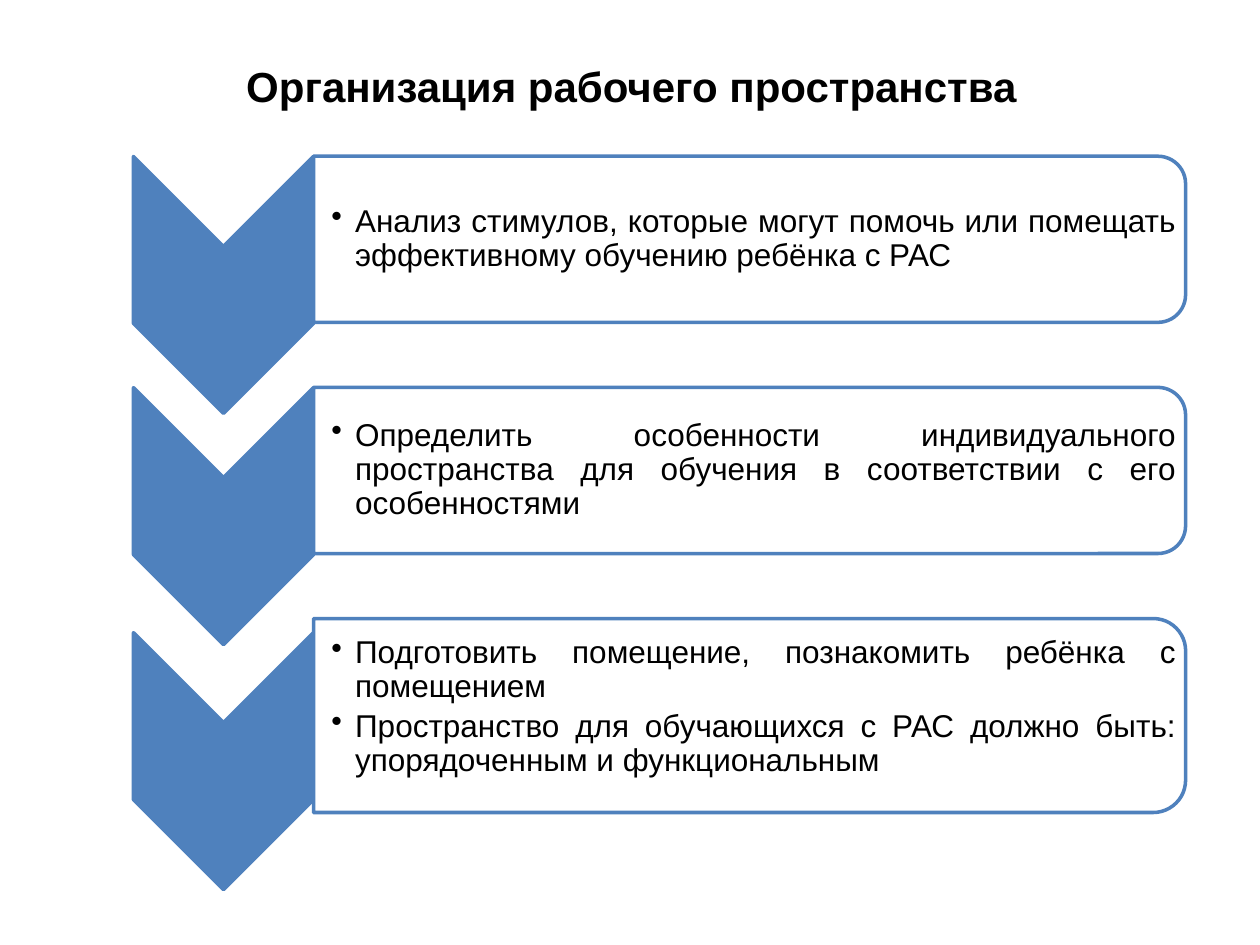
from dataclasses import dataclass

from lxml.etree import SubElement
from pptx import Presentation
from pptx.dml.color import RGBColor
from pptx.enum.shapes import MSO_SHAPE
from pptx.enum.text import MSO_ANCHOR, PP_ALIGN
from pptx.oxml.ns import qn
from pptx.util import Cm, Pt

BLUE = RGBColor(0x4F, 0x81, 0xBD)
WHITE = RGBColor(0xFF, 0xFF, 0xFF)
BLACK = RGBColor(0, 0, 0)

# Layout in centimetres
LEFT = 6.32       # seam between arrows and cards
TOP = 3.15
GAP = 1.31
CARD_W = 17.58
ARROW_W, ARROW_H = 3.63, 5.18
DROP = 0.92       # arrow centre below card centre
INSET = 0.03


@dataclass
class Step:
    lines: list[str]
    height: float = 3.35
    foot: float = INSET


STEPS = [
    Step(["Анализ стимулов, которые могут помочь или помещать "
          "эффективному обучению ребёнка с РАС"]),
    Step(["Определить особенности индивидуального пространства для обучения "
          "в соответствии с его особенностями"]),
    Step(["Подготовить помещение, познакомить ребёнка с помещением",
          "Пространство для обучающихся с РАС должно быть: "
          "упорядоченным и функциональным"], height=3.91, foot=0.36),
]


def add_turned(slide, kind: MSO_SHAPE, mid_x: float, mid_y: float,
               wide: float, high: float, fill: RGBColor) -> None:
    """Draw a shape turned by 90 degrees; wide and high are as seen."""
    shape = slide.shapes.add_shape(
        kind, Cm(mid_x - high / 2), Cm(mid_y - wide / 2), Cm(high), Cm(wide))
    shape.rotation = 90
    shape.shadow.inherit = False
    shape.fill.solid()
    shape.fill.fore_color.rgb = fill
    shape.line.color.rgb = BLUE
    shape.line.width = Pt(2)


def add_frame(slide, left: float, top: float, wide: float, high: float):
    box = slide.shapes.add_textbox(Cm(left), Cm(top), Cm(wide), Cm(high))
    frame = box.text_frame
    frame.word_wrap = True
    frame.vertical_anchor = MSO_ANCHOR.MIDDLE
    return frame


def set_text(para, text: str, size: int, align: PP_ALIGN,
             bold: bool = False) -> None:
    para.text = text
    para.alignment = align
    font = para.font
    font.name = "Arial"
    font.size = Pt(size)
    font.bold = bold
    font.color.rgb = BLACK


def add_bullet(para) -> None:
    para.line_spacing = 0.9
    para.space_after = Pt(3)
    props = para._p.get_or_add_pPr()
    props.set("marL", str(Cm(0.48)))
    props.set("indent", str(-Cm(0.48)))
    mark = SubElement(props, qn("a:buChar"))
    mark.set("char", "•")
    # The schema wants the bullet ahead of the font settings
    props.find(qn("a:defRPr")).addprevious(mark)


def add_step(slide, step: Step, top: float) -> None:
    mid = top + step.height / 2
    add_turned(slide, MSO_SHAPE.CHEVRON, LEFT - ARROW_W / 2, mid + DROP,
               ARROW_W, ARROW_H, BLUE)
    add_turned(slide, MSO_SHAPE.ROUND_2_SAME_RECTANGLE, LEFT + CARD_W / 2,
               mid, CARD_W, step.height, WHITE)
    high = step.height - 0.34
    frame = add_frame(slide, LEFT, top, CARD_W - 0.16, high)
    frame.margin_left = Cm(0.36)
    frame.margin_top = frame.margin_right = Cm(INSET)
    frame.margin_bottom = Cm(step.foot)
    shape_top = mid - high / 2
    slide.shapes[-1].top = Cm(shape_top)
    for num, line in enumerate(step.lines):
        para = frame.add_paragraph() if num else frame.paragraphs[0]
        set_text(para, line, 18, PP_ALIGN.JUSTIFY)
        add_bullet(para)


def main() -> None:
    deck = Presentation()
    deck.slide_width, deck.slide_height = Cm(25.4), Cm(19.05)
    slide = deck.slides.add_slide(deck.slide_layouts[6])

    # Title
    frame = add_frame(slide, 1.3, 0.13, 22.86, 3.18)
    set_text(frame.paragraphs[0], "Организация рабочего пространства", 24,
             PP_ALIGN.CENTER, bold=True)

    # Steps, stacked with equal gaps
    top = TOP
    for step in STEPS:
        add_step(slide, step, top)
        top += step.height + GAP

    deck.save("out.pptx")


if __name__ == "__main__":
    main()
